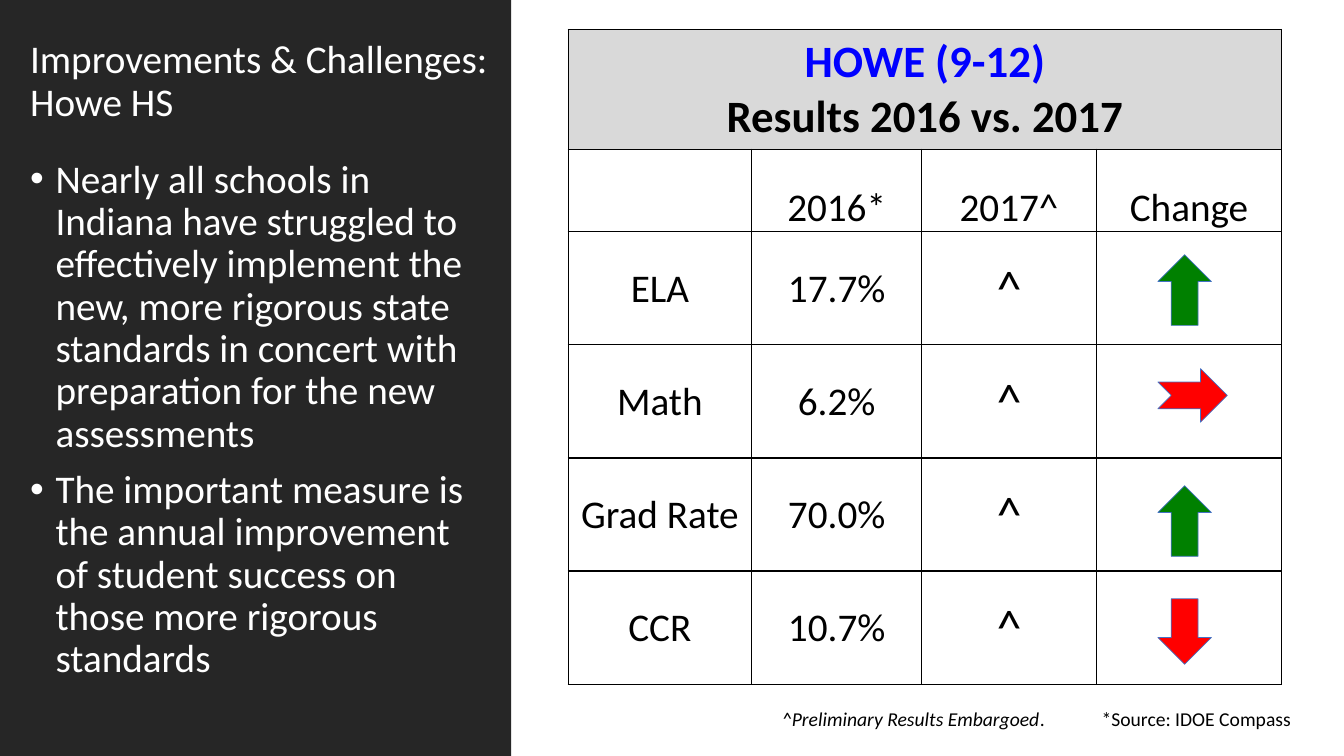
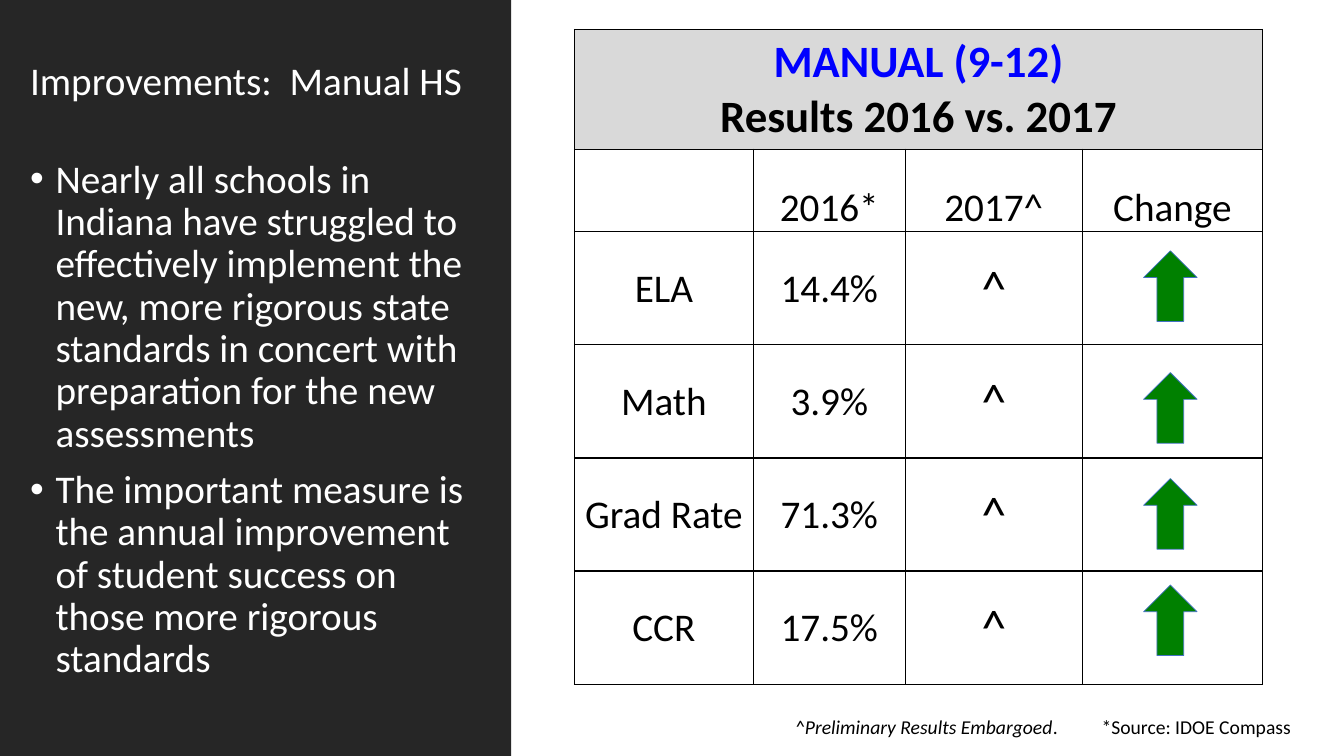
from lxml.etree import SubElement
from pptx import Presentation
from pptx.dml.color import RGBColor
from pptx.enum.shapes import MSO_SHAPE as Preset
from pptx.enum.text import MSO_ANCHOR as Anchor, MSO_AUTO_SIZE as AutoSize, PP_ALIGN as Align
from pptx.oxml.ns import qn
from pptx.util import Cm, Pt

FONT = "Calibri"
WHITE, BLACK, DARK = "FFFFFF", "000000", "262626"
GREY, BLUE, OUTLINE = "D9D9D9", "0000FF", "4472C4"
GREEN, RED = "008000", "FF0000"

PANEL = (0, 0, 12.88, 19.05)
TABLE_TOP = 0.74
HEADER_HEIGHTS = [3.02, 2.08]
ROW_HEIGHT = 2.85
ARROW_INSET = 1.55

MESSAGES = [
    "Nearly all schools in Indiana have struggled to effectively implement the new, "
    "more rigorous state standards in concert with preparation for the new assessments",
    "The important measure is the annual improvement of student success on those "
    "more rigorous standards",
]
MEASURES = ["ELA", "Math", "Grad Rate", "CCR"]

UP = (Preset.UP_ARROW, 1.35, 1.78, GREEN)
ACROSS = (Preset.NOTCHED_RIGHT_ARROW, 1.75, 1.35, RED)
DOWN = (Preset.DOWN_ARROW, 1.35, 1.65, RED)

SCHOOLS = [
    {
        "title": "Improvements & Challenges: Howe HS",
        "school": "HOWE (9-12)",
        "table_left": 14.32,
        "columns": [4.62, 4.29, 4.4, 4.67],
        "results": ["17.7%", "6.2%", "70.0%", "10.7%"],
        "changes": [(UP, 0.58), (ACROSS, 0.6), (UP, 0.7), (DOWN, 0.7)],
        "footer_top": 17.7,
        "embargo_left": 19.46,
    },
    {
        "title": "Improvements:  Manual HS",
        "school": "MANUAL (9-12)",
        "table_left": 14.48,
        "columns": [4.5, 3.84, 4.45, 4.55],
        "results": ["14.4%", "3.9%", "71.3%", "17.5%"],
        "changes": [(UP, 0.48), (UP, 0.7), (UP, 0.52), (UP, 0.35)],
        "footer_top": 17.88,
        "embargo_left": 19.79,
    },
]


def color(hex_value):
    return RGBColor.from_string(hex_value)


def style(paragraph, size, hex_value, bold=False):
    font = paragraph.font
    font.name, font.size, font.bold = FONT, Pt(size), bold
    font.color.rgb = color(hex_value)


def add_block(slide, preset, box, fill, outline=None):
    block = slide.shapes.add_shape(preset, *map(Cm, box))
    block.shadow.inherit = False
    block.fill.solid()
    block.fill.fore_color.rgb = color(fill)
    if outline:
        block.line.color.rgb = color(outline)
        block.line.width = Pt(0.5)
    else:
        block.line.fill.background()


def add_text(slide, box, wrap=True):
    frame = slide.shapes.add_textbox(*map(Cm, box)).text_frame
    frame.word_wrap = wrap
    return frame


def add_bullet(paragraph):
    properties = paragraph._p.get_or_add_pPr()
    properties.set("marL", str(Cm(0.64)))
    properties.set("indent", str(-Cm(0.64)))
    SubElement(properties, qn("a:buFont"), typeface="Arial")
    SubElement(properties, qn("a:buChar"), char="•")


def add_panel(slide, box, title):
    left, top, width, height = box
    add_block(slide, Preset.RECTANGLE, box, DARK)
    heading = add_text(slide, (left + 0.51, top + 0.74, width - 0.51, 2.67))
    heading.vertical_anchor = Anchor.MIDDLE
    heading.text = title
    heading.paragraphs[0].line_spacing = 0.9
    style(heading.paragraphs[0], 28, WHITE)

    body = add_text(slide, (left + 0.51, top + 3.89, width - 1.4, height - 4.34))
    body.text = "\n".join(MESSAGES)
    for message in body.paragraphs:
        message.line_spacing = 0.9
        message.space_before = Pt(10)
        add_bullet(message)
        style(message, 28, WHITE)


def format_cell(cell, fill):
    cell.margin_left = cell.margin_right = cell.margin_top = Cm(0.03)
    cell.margin_bottom = 0
    properties = cell._tc.get_or_add_tcPr()
    for side in ("lnL", "lnR", "lnT", "lnB"):
        border = SubElement(properties, qn(f"a:{side}"), w=str(Pt(1)))
        ink = SubElement(border, qn("a:solidFill"))
        SubElement(ink, qn("a:srgbClr"), val=BLACK)
    cell.fill.solid()
    cell.fill.fore_color.rgb = color(fill)


def write_cell(cell, text, size=28, anchor=Anchor.MIDDLE, bold=False):
    cell.text = text
    cell.vertical_anchor = anchor
    for paragraph in cell.text_frame.paragraphs:
        paragraph.alignment = Align.CENTER
        style(paragraph, size, BLACK, bold)


def add_results(slide, left, top, columns, school, results):
    heights = HEADER_HEIGHTS + [ROW_HEIGHT] * len(MEASURES)
    box = (left, top, sum(columns), sum(heights))
    table = slide.shapes.add_table(len(heights), len(columns), *map(Cm, box)).table
    table.first_row = table.horz_banding = False
    for column, width in zip(table.columns, columns):
        column.width = Cm(width)
    for index, (row, height) in enumerate(zip(table.rows, heights)):
        row.height = Cm(height)
        for cell in row.cells:
            format_cell(cell, WHITE if index else GREY)

    banner = table.cell(0, 0)
    banner.merge(table.cell(0, len(columns) - 1))
    write_cell(banner, f"{school}\nResults 2016 vs. 2017", 32, bold=True)
    banner.text_frame.paragraphs[0].font.color.rgb = color(BLUE)
    for index, label in enumerate(["2016*", "2017^", "Change"], 1):
        write_cell(table.cell(1, index), label, anchor=Anchor.BOTTOM)
    for index, (measure, result) in enumerate(zip(MEASURES, results), 2):
        write_cell(table.cell(index, 0), measure)
        write_cell(table.cell(index, 1), result)
        write_cell(table.cell(index, 2), "^", 36)


def add_changes(slide, left, top, changes):
    for index, ((preset, width, height, fill), drop) in enumerate(changes):
        box = (left + ARROW_INSET, top + index * ROW_HEIGHT + drop, width, height)
        add_block(slide, preset, box, fill, OUTLINE)


def add_footer(slide, top, embargo_left):
    source = add_text(slide, (27.51, top, 5.33, 0.86), wrap=False)
    source.text = "*Source: IDOE Compass"
    embargo = add_text(slide, (embargo_left, top, 7.34, 0.86), wrap=False)
    for text, italic in (("^Preliminary Results Embargoed", True), (".", False)):
        run = embargo.paragraphs[0].add_run()
        run.text = text
        run.font.italic = italic
    for note in (source, embargo):
        note.auto_size = AutoSize.SHAPE_TO_FIT_TEXT
        style(note.paragraphs[0], 14, BLACK)


def add_school_slide(deck, school):
    slide = deck.slides.add_slide(deck.slide_layouts[6])
    left, columns = school["table_left"], school["columns"]
    add_panel(slide, PANEL, school["title"])
    add_results(slide, left, TABLE_TOP, columns, school["school"], school["results"])
    add_changes(slide, left + sum(columns[:-1]), TABLE_TOP + sum(HEADER_HEIGHTS),
                school["changes"])
    add_footer(slide, school["footer_top"], school["embargo_left"])


def main():
    deck = Presentation()
    deck.slide_width, deck.slide_height = Cm(33.87), Cm(19.05)
    for school in SCHOOLS:
        add_school_slide(deck, school)
    deck.save("out.pptx")


if __name__ == "__main__":
    main()
